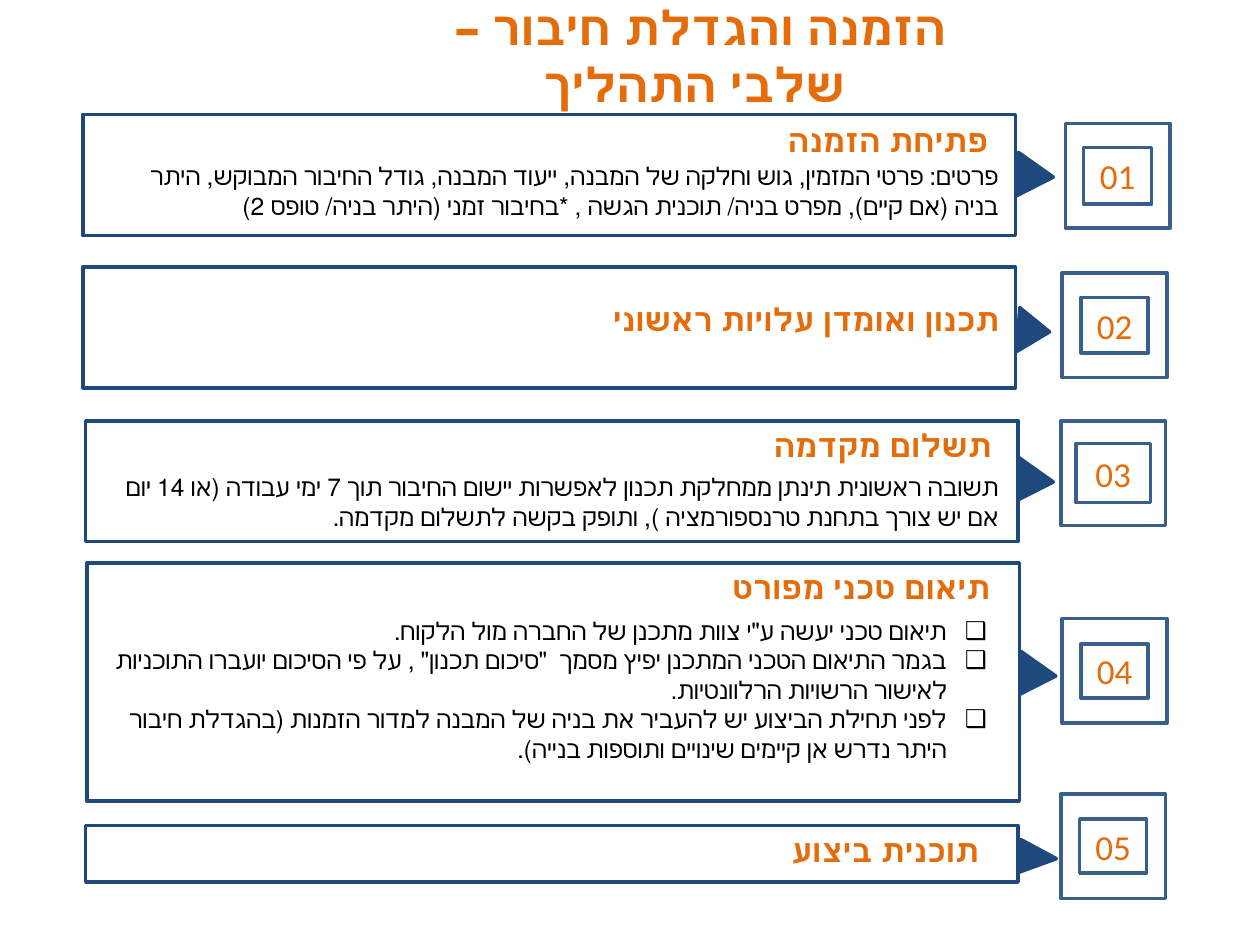
"""Build a slide of the five steps for ordering or enlarging a connection."""
from lxml.etree import SubElement
from pptx import Presentation
from pptx.dml.color import RGBColor
from pptx.enum.shapes import MSO_SHAPE
from pptx.enum.text import MSO_ANCHOR, MSO_AUTO_SIZE, PP_ALIGN
from pptx.oxml.ns import qn
from pptx.util import Pt

ORANGE = RGBColor(0xE4, 0x6C, 0x0A)
NAVY = RGBColor(0x1F, 0x49, 0x7D)
STEEL = RGBColor(0x3A, 0x5F, 0x8C)
WHITE = RGBColor(0xFF, 0xFF, 0xFF)
BLACK = RGBColor(0, 0, 0)
HEBREW = "FreeSans"

TITLE = "הזמנה והגדלת חיבור – \vשלבי התהליך"
STEPS = [
    dict(head="פתיחת הזמנה", box=(47.5, 65.5, 69.1), edge=571.7, top=65.5,
         arrow=(578.9, 90, 25.2, 20.9), badge=(608.8, 70.6, 38.9, 32.4),
         body=(54, 88.6, 41), bullet=False, lines=[
             "פרטים: פרטי המזמין, גוש וחלקה של המבנה, ייעוד המבנה, גודל החיבור המבוקש, היתר בניה (אם קיים), מפרט בניה/ תוכנית הגשה , *בחיבור זמני (היתר בניה/ טופס 2)"]),
    dict(head="תכנון ואומדן עלויות ראשוני", box=(47.5, 152.6, 69.1), edge=578.2, top=167.8,
         arrow=(578.2, 180, 25.2, 18), badge=(607, 156, 38.2, 31.7), lines=[]),
    dict(head="תשלום מקדמה", box=(49, 240.5, 69.1), edge=573.8, top=239.8,
         arrow=(578.9, 264.2, 25.2, 20.9), badge=(606.2, 240.5, 42.5, 33.8),
         body=(54, 266.4, 41), bullet=False, lines=[
             "תשובה ראשונית תינתן ממחלקת תכנון לאפשרות יישום החיבור תוך 7 ימי עבודה (או 14 יום אם יש צורך בתחנת טרנספורמציה ), ותופק בקשה לתשלום מקדמה."]),
    dict(head="תיאום טכני מפורט", box=(49.7, 321.8, 136.1), edge=573, top=321.1,
         arrow=(580.3, 375.1, 25.2, 20.9), badge=(607, 353.5, 38.2, 31),
         body=(46.8, 348.5, 92.2), bullet=True, lines=[
             "תיאום טכני יעשה ע\"י צוות מתכנן של החברה מול הלקוח.",
             "בגמר התיאום הטכני המתכנן יפיץ מסמך  \"סיכום תכנון\" , על פי הסיכום יועברו התוכניות לאישור הרשויות הרלוונטיות.",
             "לפני תחילת הביצוע יש להעביר את בניה של המבנה למדור הזמנות (בהגדלת חיבור היתר נדרש אן קיימים שינויים ותוספות בנייה)."]),
    dict(head="תוכנית ביצוע", box=(49, 471.6, 32.4), edge=566.6, top=471.6,
         arrow=(583.9, 479.5, 18.7, 20.9), badge=(606.2, 453.6, 38.2, 31), lines=[]),
]
BOX_W, HEAD_W, HEAD_H, BODY_W, SIDE = 532.8, 378.7, 28.8, 524.2, 59.8


def shape(kind, area, fill, line):
    item = slide.shapes.add_shape(kind, *map(Pt, area))
    item.shadow.inherit = False
    item.fill.solid()
    item.fill.fore_color.rgb = fill
    item.line.color.rgb = line
    item.line.width = Pt(2)
    return item


def style(para, size, color, align, bold=False, face="Calibri", script=None):
    para.alignment = align
    font = para.font
    font.name, font.size, font.bold = face, Pt(size), bold
    font.color.rgb = color
    if script:
        para._p.pPr.set("rtl", "1")
        for run in para.runs:
            SubElement(run._r.get_or_add_rPr(), qn("a:cs")).set("typeface", script)


def mark(para):
    props = para._p.get_or_add_pPr()
    props.set("marL", str(Pt(22.5)))
    props.set("indent", str(-Pt(22.5)))
    SubElement(props, qn("a:buFont")).set("typeface", "Arial")
    SubElement(props, qn("a:buChar")).set("char", "❑")


def write(area, lines, size, color, bold=False, bullet=False):
    frame = slide.shapes.add_textbox(*map(Pt, area)).text_frame
    frame.word_wrap = True
    frame.auto_size = MSO_AUTO_SIZE.SHAPE_TO_FIT_TEXT
    frame.text = "\n".join(lines)
    for para in frame.paragraphs:
        if bullet:
            mark(para)
        style(para, size, color, PP_ALIGN.RIGHT, bold, script=HEBREW)


def badge(label, left, top, wide, high):
    shape(MSO_SHAPE.RECTANGLE, (left, top, SIDE, SIDE), WHITE, STEEL)
    area = (left + (SIDE - wide) / 2, top + (SIDE - high) / 2, wide, high)
    frame = shape(MSO_SHAPE.RECTANGLE, area, WHITE, STEEL).text_frame
    frame.vertical_anchor = MSO_ANCHOR.MIDDLE
    frame.text = label
    style(frame.paragraphs[0], 20, ORANGE, PP_ALIGN.CENTER)


deck = Presentation()
deck.slide_width, deck.slide_height = Pt(720), Pt(540)
slide = deck.slides.add_slide(deck.slide_layouts[5])

title = slide.shapes.title
title.left, title.top, title.width, title.height = map(Pt, (87.8, 9.4, 617.8, 43.9))
title.text_frame.text = TITLE
title.text_frame.vertical_anchor = MSO_ANCHOR.MIDDLE
title.text_frame.auto_size = MSO_AUTO_SIZE.NONE
style(title.text_frame.paragraphs[0], 27, ORANGE, PP_ALIGN.CENTER, True, "Lato", HEBREW)

for num, step in enumerate(STEPS, 1):
    shape(MSO_SHAPE.ISOSCELES_TRIANGLE, step["arrow"], NAVY, NAVY).rotation = 94.2
    left, top, high = step["box"]
    shape(MSO_SHAPE.RECTANGLE, (left, top, BOX_W, high), WHITE, NAVY)
    badge(f"{num:02}", *step["badge"])
    write((step["edge"] - HEAD_W, step["top"], HEAD_W, HEAD_H), [step["head"]], 18, ORANGE, True)
    if step["lines"]:
        left, top, high = step["body"]
        write((left, top, BODY_W, high), step["lines"], 14, BLACK, bullet=step["bullet"])

deck.save("out.pptx")
